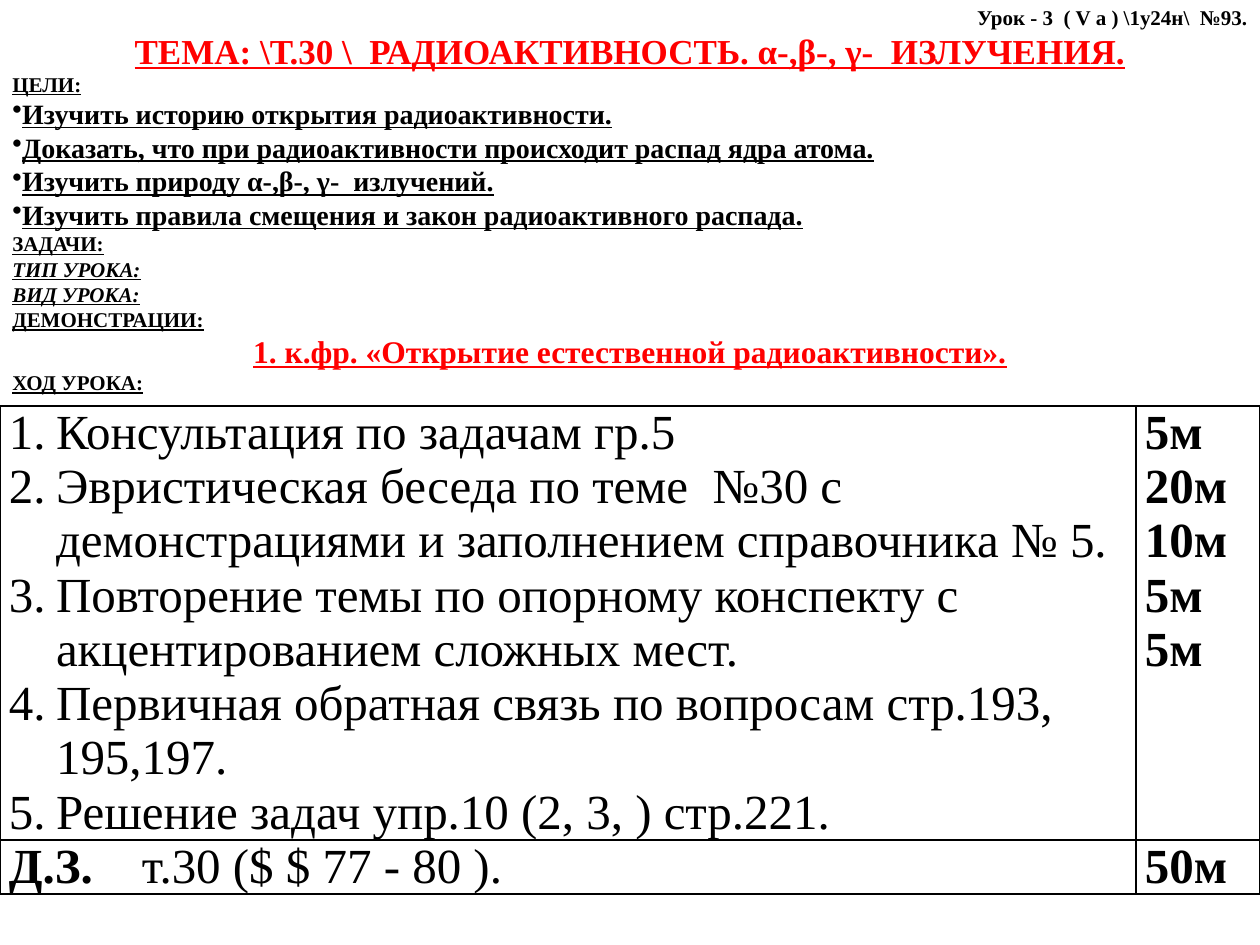
from lxml.etree import SubElement
from pptx import Presentation
from pptx.dml.color import RGBColor
from pptx.enum.text import MSO_ANCHOR, PP_ALIGN
from pptx.oxml.ns import qn
from pptx.util import Cm, Pt

FONT = "Times New Roman"
BLACK = RGBColor(0, 0, 0)
RED = RGBColor(255, 0, 0)
WHITE = RGBColor(255, 255, 255)

# style: size, colour, underline, italic, alignment, bullet
STYLES = {
    "number": (12, BLACK, False, False, PP_ALIGN.RIGHT, False),
    "topic": (20, RED, True, False, PP_ALIGN.CENTER, False),
    "label": (12, BLACK, True, False, PP_ALIGN.LEFT, False),
    "kind": (12, BLACK, True, True, PP_ALIGN.LEFT, False),
    "goal": (16, BLACK, True, False, PP_ALIGN.LEFT, True),
    "film": (18, RED, True, False, PP_ALIGN.CENTER, False),
}
LESSON = [
    ("number", "Урок - 3  ( V а ) \\1у24н\\  №93."),
    ("topic", "ТЕМА: \\Т.30 \\  РАДИОАКТИВНОСТЬ. α-,β-, γ-  ИЗЛУЧЕНИЯ."),
    ("label", "ЦЕЛИ:"),
    ("goal", "Изучить историю открытия радиоактивности."),
    ("goal", "Доказать, что при радиоактивности происходит распад ядра атома."),
    ("goal", "Изучить природу α-,β-, γ-  излучений."),
    ("goal", "Изучить правила смещения и закон радиоактивного распада."),
    ("label", "ЗАДАЧИ:"),
    ("kind", "ТИП УРОКА:"),
    ("kind", "ВИД УРОКА:"),
    ("label", "ДЕМОНСТРАЦИИ:"),
    ("film", "1. к.фр. «Открытие естественной радиоактивности»."),
    ("label", "ХОД УРОКА:"),
]
STEPS = [
    ("Консультация по задачам гр.5", "5м"),
    ("Эвристическая беседа по теме  №30 с демонстрациями и заполнением справочника № 5.", "20м"),
    ("Повторение темы по опорному конспекту с акцентированием сложных мест.", "10м"),
    ("Первичная обратная связь по вопросам стр.193, 195,197.", "5м"),
    ("Решение задач упр.10 (2, 3, ) стр.221.", "5м"),
]
HOMEWORK = ("Д.З.", "\tт.30 ($ $ 77 - 80 ).")
HOMEWORK_TIME = "50м"

COLUMN_WIDTHS = (Cm(22.9), Cm(2.5))
ROW_HEIGHTS = (Cm(8.75), Cm(1.09))
NUMBER_INDENT = Cm(0.95)
HOMEWORK_TAB = Cm(2.68)
TABLE_SIZE = 28


def format_span(span, size, color=BLACK, bold=True, underline=False, italic=False):
    font = span.font
    font.name, font.size = FONT, Pt(size)
    font.bold, font.italic, font.underline = bold, italic, underline
    font.color.rgb = color


def fill_cell(cell, lines, bold):
    cell.text_frame.text = "\n".join(lines)
    for para in cell.text_frame.paragraphs:
        format_span(para.runs[0], TABLE_SIZE, bold=bold)


def frame_cell(cell):
    """Give the cell narrow margins, black borders and a white fill."""
    cell.margin_left = cell.margin_right = Cm(0.18)
    cell.margin_top = cell.margin_bottom = 0
    properties = cell._tc.get_or_add_tcPr()
    for side in ("lnL", "lnR", "lnT", "lnB"):
        line = SubElement(properties, qn(f"a:{side}"), w=str(Pt(1)))
        SubElement(SubElement(line, qn("a:solidFill")), qn("a:srgbClr"), val=str(BLACK))
    cell.fill.solid()
    cell.fill.fore_color.rgb = WHITE


def add_lesson_text(page):
    box = page.shapes.add_textbox(0, Cm(-0.08), Cm(25.4), Cm(8.2))
    frame = box.text_frame
    frame.word_wrap = True
    frame.vertical_anchor = MSO_ANCHOR.MIDDLE
    frame.text = "\n".join(text for _, text in LESSON)
    for para, (style, _) in zip(frame.paragraphs, LESSON):
        size, color, underline, italic, alignment, bullet = STYLES[style]
        para.alignment = alignment
        format_span(para.runs[0], size, color, underline=underline, italic=italic)
        if bullet:
            SubElement(para._p.get_or_add_pPr(), qn("a:buChar"), char="•")


def add_plan_table(page):
    frame = page.shapes.add_table(2, 2, 0, Cm(8.18), sum(COLUMN_WIDTHS), sum(ROW_HEIGHTS))
    table = frame.table
    table.first_row = table.horz_banding = False
    for column, width in zip(table.columns, COLUMN_WIDTHS):
        column.width = width
    for row, height in zip(table.rows, ROW_HEIGHTS):
        row.height = height
    for cell in table.iter_cells():
        frame_cell(cell)

    steps, times = zip(*STEPS)
    fill_cell(table.cell(0, 0), steps, bold=False)
    fill_cell(table.cell(0, 1), times, bold=True)
    fill_cell(table.cell(1, 1), [HOMEWORK_TIME], bold=True)
    for para in table.cell(0, 0).text_frame.paragraphs:
        properties = para._p.get_or_add_pPr()
        properties.set("marL", str(NUMBER_INDENT))
        properties.set("indent", str(-NUMBER_INDENT))
        SubElement(properties, qn("a:buFont"), typeface=FONT)
        SubElement(properties, qn("a:buAutoNum"), type="arabicPeriod")

    label, task = HOMEWORK
    fill_cell(table.cell(1, 0), [label], bold=True)
    para = table.cell(1, 0).text_frame.paragraphs[0]
    span = para.add_run()
    span.text = task
    format_span(span, TABLE_SIZE, bold=False)
    tabs = SubElement(para._p.get_or_add_pPr(), qn("a:tabLst"))
    SubElement(tabs, qn("a:tab"), pos=str(HOMEWORK_TAB), algn="l")


def main():
    deck = Presentation()
    deck.slide_width, deck.slide_height = Cm(25.4), Cm(19.05)
    page = deck.slides.add_slide(deck.slide_layouts[6])
    add_plan_table(page)
    add_lesson_text(page)
    deck.save("out.pptx")


if __name__ == "__main__":
    main()
